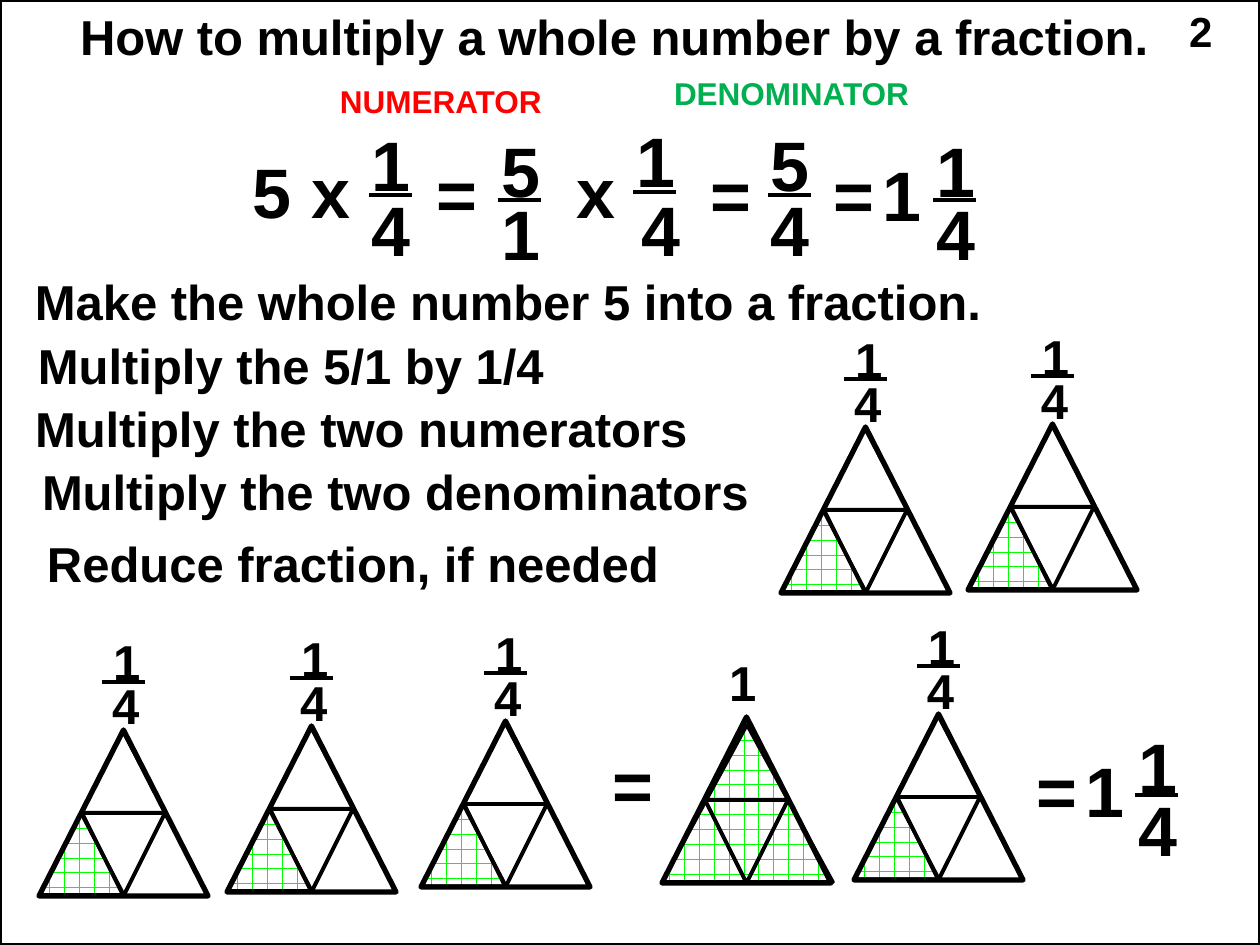
"""Builds a slide on multiplying a whole number by a fraction."""
from lxml import etree
from pptx import Presentation
from pptx.dml.color import RGBColor
from pptx.enum.dml import MSO_PATTERN
from pptx.enum.shapes import MSO_CONNECTOR, MSO_SHAPE
from pptx.enum.text import MSO_AUTO_SIZE
from pptx.oxml.ns import qn
from pptx.util import Pt

PX = 914400 / 126
BRICK = MSO_PATTERN.HORIZONTAL_BRICK
TRIANGLE = MSO_SHAPE.ISOSCELES_TRIANGLE
RECTANGLE = MSO_SHAPE.RECTANGLE
STRAIGHT = MSO_CONNECTOR.STRAIGHT
FIT = MSO_AUTO_SIZE.SHAPE_TO_FIT_TEXT


def px(value):
    return round(value * PX)


def color(code):
    return RGBColor.from_string(code)


class Page:
    font = "Arial"
    ink = "000000"
    paper = "FFFFFF"
    shade = "00FF00"
    large = 40
    medium = 28

    def __init__(self, deck):
        self.slide = deck.slides.add_slide(deck.slide_layouts[6])
        self.shapes = self.slide.shapes

    def text(self, words, left, top, width, height, size, ink=ink, wrap=True):
        box = self.shapes.add_textbox(px(left), px(top), px(width), px(height))
        frame = box.text_frame
        frame.text = words
        frame.word_wrap = wrap
        frame.auto_size = FIT
        frame.margin_left = frame.margin_right = px(12)
        frame.margin_top = frame.margin_bottom = px(6)
        span = frame.paragraphs[0].runs[0]
        span.font.name = self.font
        span.font.size = Pt(size)
        span.font.bold = True
        span.font.color.rgb = color(ink)

    def symbol(self, words, left, top, size=large, width=54):
        self.text(words, left, top, width, 97 if size == self.large else 71, size)

    def bar(self, left, top):
        line = self.shapes.add_connector(
            STRAIGHT, px(left), px(top), px(left + 43), px(top))
        line.line.color.rgb = color(self.ink)
        line.line.width = Pt(2.25)
        etree.SubElement(line._element.spPr, qn("a:effectLst"))

    def fraction(self, numerator, denominator, left, top, bar_top, bottom, shift=0):
        self.symbol(numerator, left, top)
        self.bar(left + 9, bar_top)
        self.symbol(denominator, left + shift, bottom)

    def outline(self, shape, weight):
        shape.shadow.inherit = False
        shape.line.color.rgb = color(self.ink)
        shape.line.width = Pt(weight)

    def preset(self, kind, left, top, width, height, weight, shapes=None):
        shape = (shapes or self.shapes).add_shape(
            kind, px(left), px(top), px(width), px(height))
        shape.fill.background()
        self.outline(shape, weight)
        return shape

    def filled_triangle(self, shapes, points, weight, shaded=False):
        builder = shapes.build_freeform(*points[0], scale=PX)
        builder.add_line_segments(points[1:], close=True)
        shape = builder.convert_to_shape()
        if shaded:
            shape.fill.patterned()
            shape.fill.pattern = BRICK
            shape.fill.fore_color.rgb = color(self.shade)
            shape.fill.back_color.rgb = color(self.paper)
        else:
            shape.fill.solid()
            shape.fill.fore_color.rgb = color(self.paper)
        self.outline(shape, weight)

    def split_triangle(self, left, top, shaded_points):
        shapes = self.shapes.add_group_shape().shapes
        corners = [(84, 1), (127, 83), (42, 83)]
        for points, weight, shaded in ((corners, 2.25, False), (shaded_points, 2, True)):
            placed = [(left + x, top + y) for x, y in points]
            self.filled_triangle(shapes, placed, weight, shaded)
        self.preset(TRIANGLE, left, top, 169, 166, 3, shapes)
        middle = self.preset(TRIANGLE, left + 43, top + 83, 83, 83, 2.25, shapes)
        middle._element.spPr.xfrm.set("flipV", "1")

    def quarter(self, left, top):
        self.symbol("1", left + 62, top - 104, self.medium)
        self.bar(left + 63, top - 48)
        self.symbol("4", left + 61, top - 60, self.medium)
        self.split_triangle(left, top, [(42, 83), (85, 165), (0, 165)])


def main():
    deck = Presentation()
    deck.slide_width, deck.slide_height = px(1260), px(945)
    page = Page(deck)

    page.text("NUMERATOR", 328, 76, 228, 49, 18, "FF0000", wrap=False)
    page.text("DENOMINATOR", 662, 68, 261, 49, 18, "00B050", wrap=False)
    page.preset(RECTANGLE, 0, 0, 1260, 945, 2)
    page.text("2", 1177, 0, 83, 63, 24)

    for words, left, top, width in (
        ("How to multiply a whole number by a fraction.", 68, 0, 1129),
        ("Make the whole number 5 into a fraction.", 23, 265, 1009),
        ("Multiply the 5/1 by 1/4", 26, 330, 621),
        ("Multiply the two numerators", 23, 392, 751),
        ("Multiply the two denominators", 30, 456, 810),
        ("Reduce fraction, if needed", 35, 527, 732),
    ):
        page.text(words, left, top, width, 71, page.medium)

    page.symbol("5 x", 241, 142, width=152)
    page.symbol("x", 564, 142, width=97)
    for words, left, top in (
        ("=", 425, 145), ("=", 698, 146), ("=", 822, 146), ("1", 871, 146),
        ("=", 601, 735), ("=", 1024, 741), ("1", 1074, 741),
    ):
        page.symbol(words, left, top)

    page.fraction("1", "4", 360, 116, 195, 180)
    page.fraction("5", "1", 489, 122, 200, 185)
    page.fraction("1", "4", 624, 111, 192, 180, shift=5)
    page.fraction("5", "4", 759, 116, 195, 180)
    page.fraction("1", "4", 924, 122, 200, 185)
    page.fraction("1", "4", 1126, 717, 795, 780)

    for left, top in ((781, 427), (968, 424), (39, 730),
                      (227, 726), (421, 721), (854, 714)):
        page.quarter(left, top)

    page.symbol("1", 717, 646, page.medium)
    page.split_triangle(662, 717, [(85, 8), (171, 165), (0, 165)])

    deck.save("out.pptx")


if __name__ == "__main__":
    main()
